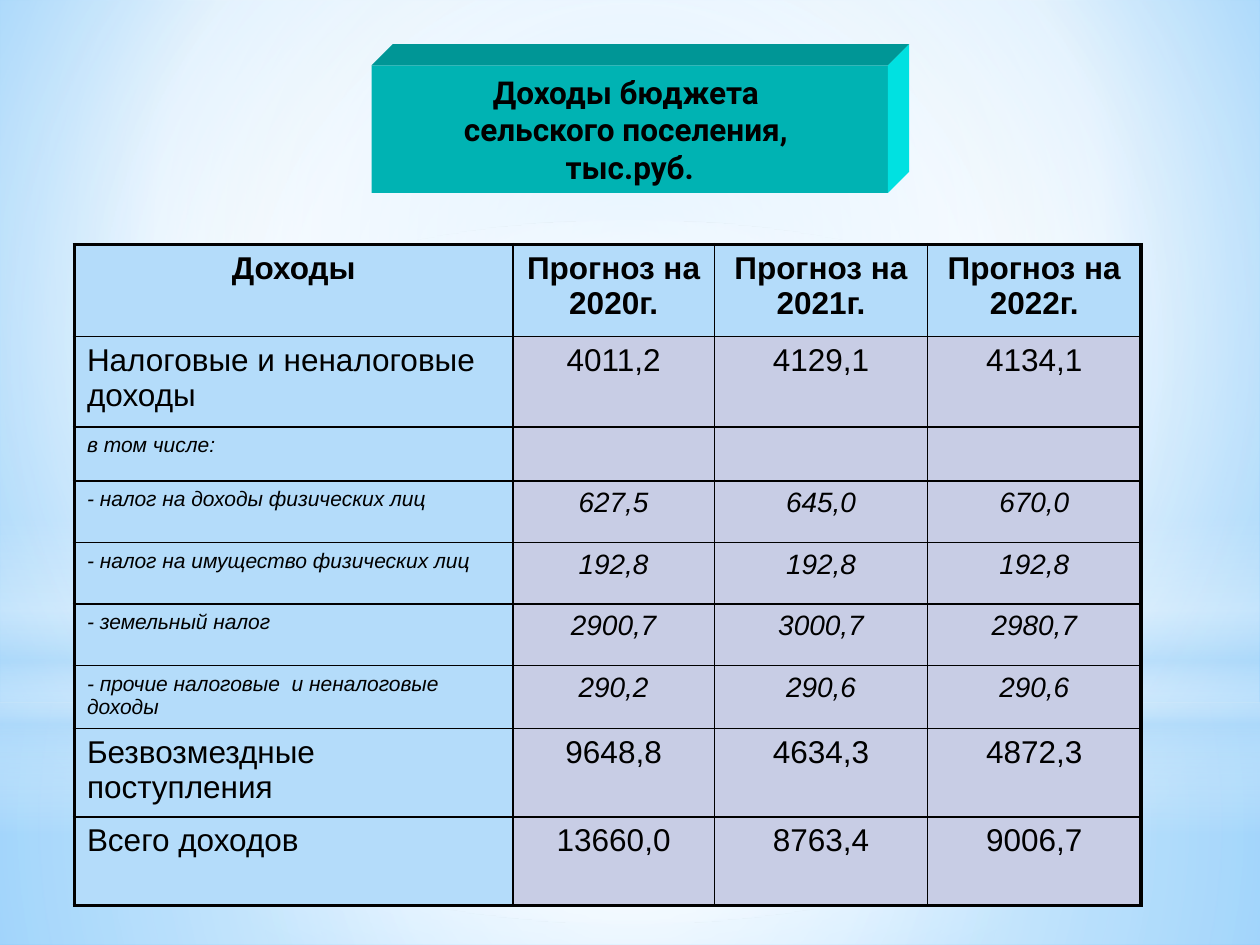
from lxml import etree
from pptx import Presentation
from pptx import util as u
from pptx.dml.color import RGBColor
from pptx.enum import shapes, text
from pptx.oxml.ns import nsdecls, qn

BLACK, SKY, LILAC = "000000", "B4DCFA", "C8CDE5"
WHITE = "FFFFFF"
THIN, THICK = 1, 2.25
CENTER = (50, 50, 50, 50)


def color(value):
    return RGBColor.from_string(value)


def assign(target, values):
    for name, value in values.items():
        setattr(target, name, value)


def gradient(stops, focus=None):
    listed = "".join(
        f'<a:gs pos="{pos * 1000}"><a:srgbClr val="{tint}">'
        f'<a:alpha val="{opacity * 1000}"/></a:srgbClr></a:gs>'
        for pos, tint, opacity in stops)
    if focus:
        sides = " ".join(f'{side}="{share * 1000}"' for side, share in zip("ltrb", focus))
        course = f'<a:path path="circle"><a:fillToRect {sides}/></a:path>'
    else:
        course = '<a:lin ang="5400000" scaled="0"/>'
    return etree.fromstring(
        f'<a:gradFill {nsdecls("a")} rotWithShape="1"><a:gsLst>{listed}</a:gsLst>{course}</a:gradFill>')


class BudgetSlide:
    font = "Arial"
    title_font = "Roboto"

    def __init__(self, deck):
        self.slide = deck.slides.add_slide(deck.slide_layouts[5])
        self.master_tree = deck.slide_master.shapes.element

    def blend(self, fill, owner, stops, focus):
        fill.solid()
        solid = owner.find(".//" + qn("a:solidFill"))
        solid.getparent().replace(solid, gradient(stops, focus))

    def background(self, stops, focus):
        self.blend(self.slide.background.fill, self.slide.element, stops, focus)

    def glow(self, kind, top, height, stops, focus=CENTER):
        layer = self.slide.shapes.add_shape(kind, 0, u.Cm(top), u.Cm(25.4), u.Cm(height))
        layer.shadow.inherit = False
        layer.line.fill.background()
        self.blend(layer.fill, layer.element, stops, focus)
        self.master_tree.append(layer.element)

    def wording(self, paragraph, content, align, **style):
        paragraph.alignment = align
        run = paragraph.add_run()
        run.text = content
        run.font.color.rgb = color(BLACK)
        assign(run.font, style)

    def title(self, lines, left, top, width, height, fill):
        heading = self.slide.shapes.title
        assign(heading, dict(left=u.Cm(left), top=u.Cm(top), width=u.Cm(width), height=u.Cm(height)))
        heading.fill.solid()
        heading.fill.fore_color.rgb = color(fill)
        frame = heading.text_frame
        assign(frame, dict(word_wrap=True, auto_size=text.MSO_AUTO_SIZE.NONE,
                           vertical_anchor=text.MSO_ANCHOR.MIDDLE))
        for index, line in enumerate(lines):
            paragraph = frame.add_paragraph() if index else frame.paragraphs[0]
            self.wording(paragraph, line, text.PP_ALIGN.CENTER,
                         name=self.title_font, size=u.Pt(18), bold=True)

    def face(self, corners, fill):
        points = [(u.Cm(x), u.Cm(y)) for x, y in corners]
        outline = self.slide.shapes.build_freeform(*points[0], scale=1.0)
        outline.add_line_segments(points[1:], close=True)
        side = outline.convert_to_shape()
        side.shadow.inherit = False
        side.fill.solid()
        side.fill.fore_color.rgb = color(fill)
        side.line.fill.background()

    def borders(self, cell, widths):
        properties = cell._tc.get_or_add_tcPr()
        for index, (side, width) in enumerate(zip("LRTB", widths)):
            properties.insert(index, etree.fromstring(
                f'<a:ln{side} {nsdecls("a")} w="{u.Pt(width)}"><a:solidFill>'
                f'<a:srgbClr val="{BLACK}"/></a:solidFill></a:ln{side}>'))

    def table(self, left, top, columns, rows, heights):
        grid = self.slide.shapes.add_table(
            len(rows), len(columns), u.Cm(left), u.Cm(top),
            u.Cm(sum(columns)), u.Cm(sum(heights))).table
        assign(grid, dict(first_row=False, horz_banding=False))
        for column, width in zip(grid.columns, columns):
            column.width = u.Cm(width)
        last_row, last_column = len(rows) - 1, len(columns) - 1
        for r, (detail, *entries) in enumerate(rows):
            grid.rows[r].height = u.Cm(heights[r])
            for c, entry in enumerate(entries):
                cell = grid.cell(r, c)
                cell.fill.solid()
                cell.fill.fore_color.rgb = color(SKY if r == 0 or c == 0 else LILAC)
                edges = (c == 0, c == last_column, r == 0, r == last_row)
                self.borders(cell, [THICK if edge else THIN for edge in edges])
                if entry:
                    size = 18 if not detail else 16 if c else 12
                    align = text.PP_ALIGN.CENTER if r == 0 or c else text.PP_ALIGN.LEFT
                    self.wording(cell.text_frame.paragraphs[0], entry, align, name=self.font,
                                 size=u.Pt(size), bold=r == 0, italic=detail)


def main():
    deck = Presentation()
    assign(deck, dict(slide_width=u.Cm(25.4), slide_height=u.Cm(19.05)))
    budget = BudgetSlide(deck)

    budget.background([(0, "9ED5FF", 100), (60, WHITE, 100), (100, "5BB9FF", 100)],
                      (20, 10, 20, 60))
    box, oval = shapes.MSO_SHAPE.RECTANGLE, shapes.MSO_SHAPE.OVAL
    budget.glow(box, 14.17, 4.88, [(0, WHITE, 91), (37, WHITE, 76), (100, SKY, 79)])
    budget.glow(box, 0, 14.17, [(0, WHITE, 89), (48, WHITE, 62), (100, SKY, 79)])
    budget.glow(box, 10.46, 6.35, [(0, WHITE, 0), (29, WHITE, 30), (45, SKY, 40),
                                   (55, WHITE, 26), (65, SKY, 60), (100, WHITE, 0)], None)
    budget.glow(oval, 4.45, 14.17, [(0, WHITE, 100), (56, WHITE, 0)])

    left, top, width, height, depth = 7.49, 1.32, 10.41, 2.57, 0.43
    right, bottom = left + width, top + height
    budget.title(["Доходы бюджета ", "сельского поселения, ", "тыс.руб."],
                 left, top, width, height, "00B3B3")
    budget.face([(left, top), (left + depth, top - depth),
                 (right + depth, top - depth), (right, top)], "009696")
    budget.face([(right, top), (right + depth, top - depth),
                 (right + depth, bottom - depth), (right, bottom)], "00E1E1")

    rows = [
        (False, "Доходы", "Прогноз на 2020г.", "Прогноз на 2021г.", "Прогноз на 2022г."),
        (False, "Налоговые и неналоговые доходы", "4011,2", "4129,1", "4134,1"),
        (True, "в том числе:", "", "", ""),
        (True, "- налог на доходы физических лиц", "627,5", "645,0", "670,0"),
        (True, "- налог на имущество физических лиц", "192,8", "192,8", "192,8"),
        (True, "- земельный налог", "2900,7", "3000,7", "2980,7"),
        (True, "- прочие налоговые  и неналоговые доходы", "290,2", "290,6", "290,6"),
        (False, "Безвозмездные поступления", "9648,8", "4634,3", "4872,3"),
        (False, "Всего доходов", "13660,0", "8763,4", "9006,7"),
    ]
    budget.table(1.5, 4.93, [8.84, 4.06, 4.3, 4.3], rows,
                 [1.85, 1.83, 1.09, 1.24, 1.24, 1.24, 1.27, 1.78, 1.78])
    deck.save("out.pptx")


if __name__ == "__main__":
    main()
